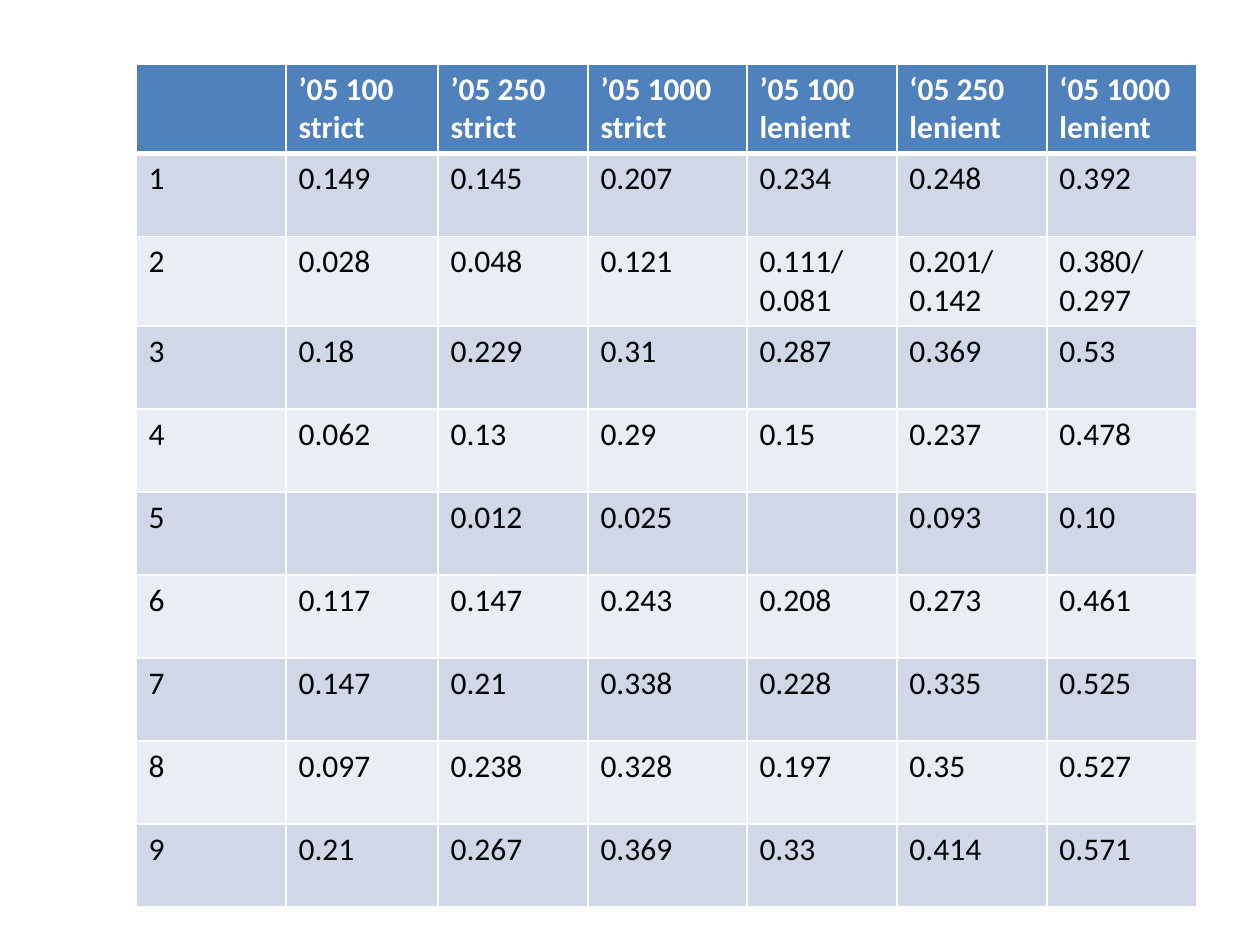
from lxml.etree import SubElement
from pptx import Presentation
from pptx.dml.color import RGBColor
from pptx.oxml.ns import qn
from pptx.util import Emu, Pt

PIXELS_PER_INCH = 126
WHITE = RGBColor(0xFF, 0xFF, 0xFF)
BLACK = RGBColor(0x00, 0x00, 0x00)
HEADER_BLUE = RGBColor(0x4F, 0x81, 0xBD)
BAND_DARK = RGBColor(0xD0, 0xD8, 0xE8)
BAND_LIGHT = RGBColor(0xE9, 0xED, 0xF4)

COLUMN_WIDTHS = [150, 152, 150, 159, 150, 150, 150]
ROW_HEIGHT = 83
SCORES = [
    ["", "’05 100\nstrict", "’05 250\nstrict", "’05 1000\nstrict",
     "’05 100\nlenient", "‘05 250\nlenient", "‘05 1000\nlenient"],
    ["1", "0.149", "0.145", "0.207", "0.234", "0.248", "0.392"],
    ["2", "0.028", "0.048", "0.121", "0.111/\n0.081", "0.201/\n0.142", "0.380/\n0.297"],
    ["3", "0.18", "0.229", "0.31", "0.287", "0.369", "0.53"],
    ["4", "0.062", "0.13", "0.29", "0.15", "0.237", "0.478"],
    ["5", "", "0.012", "0.025", "", "0.093", "0.10"],
    ["6", "0.117", "0.147", "0.243", "0.208", "0.273", "0.461"],
    ["7", "0.147", "0.21", "0.338", "0.228", "0.335", "0.525"],
    ["8", "0.097", "0.238", "0.328", "0.197", "0.35", "0.527"],
    ["9", "0.21", "0.267", "0.369", "0.33", "0.414", "0.571"],
]


def px(length):
    return Emu(round(length * 914400 / PIXELS_PER_INCH))


class SlideBuilder:
    font_name = "Calibri"
    font_size = Pt(18)
    thin_border = Pt(1)
    thick_border = Pt(3)

    def __init__(self, slide):
        self.slide = slide

    def table(self, left, top, column_widths, row_height, rows):
        table = self.slide.shapes.add_table(
            len(rows), len(column_widths), px(left), px(top),
            px(sum(column_widths)), px(row_height * len(rows))).table
        for column, width in zip(table.columns, column_widths):
            column.width = px(width)
        for row_index, values in enumerate(rows):
            table.rows[row_index].height = px(row_height)
            for column_index, value in enumerate(values):
                self.cell(table.cell(row_index, column_index), value, row_index)

    def cell(self, cell, value, row_index):
        is_header = row_index == 0
        self.borders(cell, row_index)
        cell.fill.solid()
        if is_header:
            cell.fill.fore_color.rgb = HEADER_BLUE
        else:
            cell.fill.fore_color.rgb = BAND_DARK if row_index % 2 else BAND_LIGHT
        if value:
            self.text(cell.text_frame, value, WHITE if is_header else BLACK, is_header)

    def borders(self, cell, row_index):
        properties = cell._tc.get_or_add_tcPr()
        thick_sides = {0: "a:lnB", 1: "a:lnT"}
        for side in ("a:lnL", "a:lnR", "a:lnT", "a:lnB"):
            is_thick = thick_sides.get(row_index) == side
            width = self.thick_border if is_thick else self.thin_border
            line = SubElement(properties, qn(side), w=str(int(width)))
            fill = SubElement(line, qn("a:solidFill"))
            SubElement(fill, qn("a:srgbClr"), val=str(WHITE))

    def text(self, text_frame, value, color, bold):
        for index, line in enumerate(value.split("\n")):
            paragraph = text_frame.add_paragraph() if index else text_frame.paragraphs[0]
            run = paragraph.add_run()
            run.text = line
            run.font.name = self.font_name
            run.font.size = self.font_size
            run.font.bold = bold
            run.font.color.rgb = color


def main():
    presentation = Presentation()
    presentation.slide_width = px(1260)
    presentation.slide_height = px(945)
    slide = presentation.slides.add_slide(presentation.slide_layouts[6])
    SlideBuilder(slide).table(136, 64, COLUMN_WIDTHS, ROW_HEIGHT, SCORES)
    presentation.save("out.pptx")


if __name__ == "__main__":
    main()
